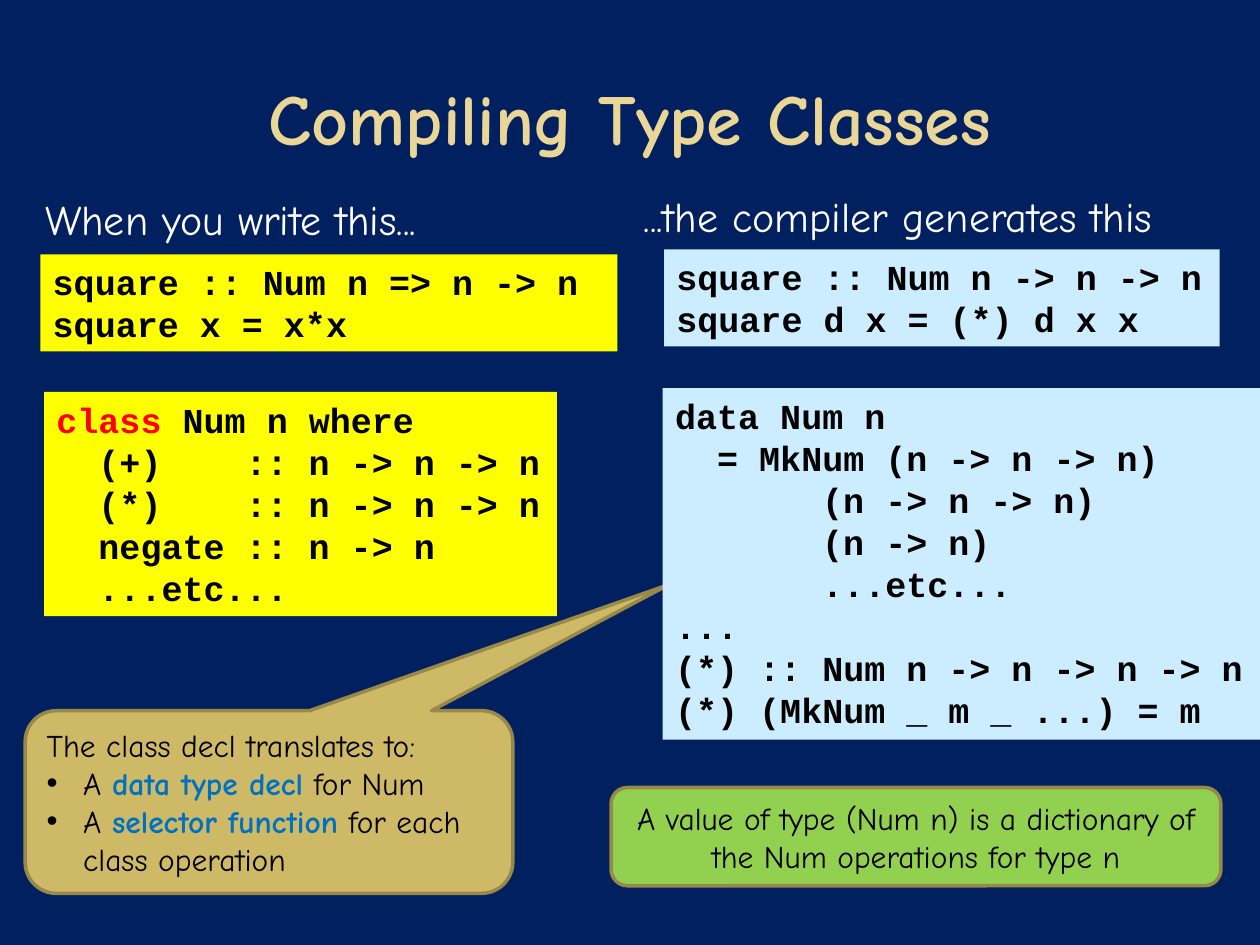
import pptx
import pptx.util
from lxml import etree
from pptx.dml.color import RGBColor
from pptx.enum.shapes import MSO_SHAPE
from pptx.enum.text import MSO_ANCHOR, MSO_AUTO_SIZE, PP_ALIGN
from pptx.oxml.ns import qn

Inches, Pt = pptx.util.Inches, pptx.util.Pt


class Theme:
    prose, code = "Comic Neue", "Courier New"
    title_size, heading_size, code_size, note_size = 41, 24, 20, 18
    background, title, heading, ink = "002060", "EAD696", "FFFFFF", "000000"
    keyword, emphasis = "FF0000", "0070C0"
    source, generated = "FFFF00", "CCECFF"
    callout, remark, outline = "CEB966", "92D050", "98894B"


TITLE = "Compiling Type Classes"

# Each box is left, top, width, height in inches.
HEADINGS = [
    ((0.26, 1.49, 3.63, 0.5), "When you write this..."),
    ((5.01, 1.46, 4.79, 0.5), "...the compiler generates this"),
]

# A line is a list of (text, colour) pieces.
SOURCE_CODE = [
    ((0.32, 2.02, 4.58, 0.77), ["square :: Num n => n -> n", "square x = x*x"]),
    ((0.35, 3.11, 4.07, 1.78), [
        [("class ", Theme.keyword), ("Num n where", Theme.ink)],
        "  (+)    :: n -> n -> n",
        "  (*)    :: n -> n -> n",
        "  negate :: n -> n",
        "  ...etc...",
    ]),
]
GENERATED_CODE = [
    ((5.27, 1.98, 4.41, 0.77), ["square :: Num n -> n -> n", "square d x = (*) d x x"]),
    ((5.26, 3.08, 4.75, 2.79), [
        "data Num n",
        "  = MkNum (n -> n -> n)",
        "\t    (n -> n -> n)",
        "\t    (n -> n)",
        "\t    ...etc...",
        "...",
        "(*) :: Num n -> n -> n -> n",
        "(*) (MkNum _ m _ ...) = m",
    ]),
]

CALLOUT_BOX = (0.2, 5.64, 3.87, 1.45)
CALLOUT_SHAPE = (0.82, -1.19, 0.17)
CALLOUT_LINES = [
    "The class decl translates to:",
    [("A ", Theme.ink), ("data type decl", Theme.emphasis), (" for Num", Theme.ink)],
    [("A ", Theme.ink), ("selector function", Theme.emphasis),
     (" for each class operation", Theme.ink)],
]
REMARK_BOX = (4.85, 6.25, 4.84, 0.78)
REMARK = "A value of type (Num n) is a dictionary of the Num operations for type n"


def color(value):
    return RGBColor.from_string(value)


def write(shape, lines, font, size, ink=Theme.ink, bold=False, wrap=True,
          anchor=MSO_ANCHOR.TOP, align=PP_ALIGN.LEFT):
    frame = shape.text_frame
    frame.word_wrap = wrap
    frame.vertical_anchor = anchor
    frame.auto_size = MSO_AUTO_SIZE.SHAPE_TO_FIT_TEXT
    for index, line in enumerate(lines):
        paragraph = frame.add_paragraph() if index else frame.paragraphs[0]
        paragraph.alignment = align
        paragraph.font.name, paragraph.font.size = font, Pt(size)
        paragraph.font.bold = bold
        paragraph.font.color.rgb = color(ink)
        pieces = [(line, ink)] if isinstance(line, str) else line
        for text, piece_color in pieces:
            run = paragraph.add_run()
            run.text = text
            if piece_color != ink:
                run.font.color.rgb = color(piece_color)
                run.font.bold = True


def add_panel(slide, kind, box, fill, outline=None):
    shape = slide.shapes.add_shape(kind, *map(Inches, box))
    shape.shadow.inherit = False
    shape.fill.solid()
    shape.fill.fore_color.rgb = color(fill)
    if outline:
        shape.line.color.rgb = color(outline)
        shape.line.width = Pt(2)
    else:
        shape.line.fill.background()
    return shape


def add_code(slide, listings, fill):
    for box, lines in listings:
        panel = add_panel(slide, MSO_SHAPE.RECTANGLE, box, fill)
        write(panel, lines, Theme.code, Theme.code_size, bold=True, wrap=False)


def add_bullet(paragraph, indent=0.29):
    properties = paragraph._p.get_or_add_pPr()
    properties.set("marL", str(Inches(indent)))
    properties.set("indent", str(-Inches(indent)))
    bullet_font = etree.Element(qn("a:buFont"), typeface="Arial")
    bullet = etree.Element(qn("a:buChar"), char="•")
    properties.insert(0, bullet_font)
    properties.insert(1, bullet)


def add_title(slide):
    title = slide.shapes.title
    title.left, title.top, title.width, title.height = map(Inches, (0.5, 0.3, 9, 1.25))
    write(title, [TITLE], Theme.prose, Theme.title_size, Theme.title, bold=True,
          anchor=MSO_ANCHOR.MIDDLE, align=PP_ALIGN.CENTER)
    title.text_frame.auto_size = MSO_AUTO_SIZE.NONE


def add_callout(slide):
    callout = add_panel(slide, MSO_SHAPE.ROUNDED_RECTANGULAR_CALLOUT, CALLOUT_BOX,
                        Theme.callout, Theme.outline)
    for index, value in enumerate(CALLOUT_SHAPE):
        callout.adjustments[index] = value
    write(callout, CALLOUT_LINES, Theme.prose, Theme.note_size, anchor=MSO_ANCHOR.MIDDLE)
    for paragraph in callout.text_frame.paragraphs[1:]:
        add_bullet(paragraph)


def main():
    presentation = pptx.Presentation()
    presentation.slide_width, presentation.slide_height = Inches(10), Inches(7.5)
    slide = presentation.slides.add_slide(presentation.slide_layouts.get_by_name("Title Only"))
    slide.background.fill.solid()
    slide.background.fill.fore_color.rgb = color(Theme.background)

    add_title(slide)
    add_code(slide, SOURCE_CODE, Theme.source)
    add_callout(slide)  # its pointer runs behind the generated code
    add_code(slide, GENERATED_CODE, Theme.generated)
    for box, text in HEADINGS:
        heading = slide.shapes.add_textbox(*map(Inches, box))
        write(heading, [text], Theme.prose, Theme.heading_size, Theme.heading, wrap=False)
    remark = add_panel(slide, MSO_SHAPE.ROUNDED_RECTANGLE, REMARK_BOX,
                       Theme.remark, Theme.outline)
    write(remark, [REMARK], Theme.prose, Theme.note_size,
          anchor=MSO_ANCHOR.MIDDLE, align=PP_ALIGN.CENTER)
    presentation.save("out.pptx")


if __name__ == "__main__":
    main()
